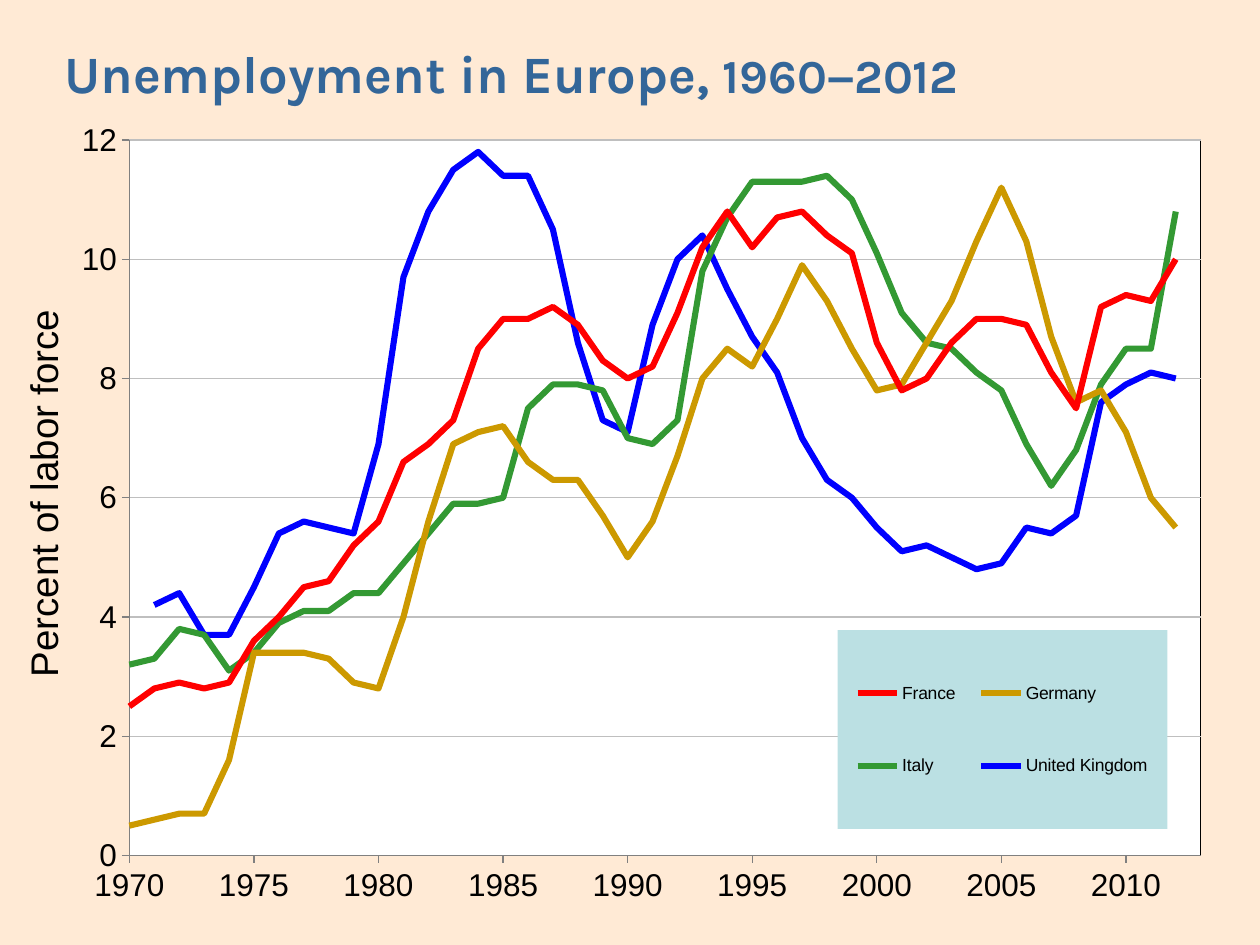
from lxml.etree import fromstring
from pptx import Presentation
from pptx.chart.data import XyChartData
from pptx.dml.color import RGBColor
from pptx.enum.chart import XL_CHART_TYPE, XL_LEGEND_POSITION, XL_MARKER_STYLE, XL_TICK_MARK
from pptx.enum.text import MSO_ANCHOR, PP_ALIGN
from pptx.oxml.ns import nsdecls, qn
from pptx.util import Inches, Pt

TITLE = [("Unemployment in Europe, ", 30, "Karla"), ("1960", 27, "Karla"),
         ("–", 28, "Arial"), ("2012", 27, "Karla")]
AXIS_LABEL = [("Percent of labor force", 22, "Arial")]
FIRST_YEAR = 1970
COUNTRIES = [
    ("France", "FF0000", [
        2.5, 2.8, 2.9, 2.8, 2.9, 3.6, 4, 4.5, 4.6, 5.2, 5.6, 6.6, 6.9, 7.3, 8.5,
        9, 9, 9.2, 8.9, 8.3, 8, 8.2, 9.1, 10.2, 10.8, 10.2, 10.7, 10.8, 10.4, 10.1,
        8.6, 7.8, 8, 8.6, 9, 9, 8.9, 8.1, 7.5, 9.2, 9.4, 9.3, 10]),
    ("Germany", "CC9900", [
        0.5, 0.6, 0.7, 0.7, 1.6, 3.4, 3.4, 3.4, 3.3, 2.9, 2.8, 4, 5.6, 6.9, 7.1,
        7.2, 6.6, 6.3, 6.3, 5.7, 5, 5.6, 6.7, 8, 8.5, 8.2, 9, 9.9, 9.3, 8.5,
        7.8, 7.9, 8.6, 9.3, 10.3, 11.2, 10.3, 8.7, 7.6, 7.8, 7.1, 6, 5.5]),
    ("Italy", "339933", [
        3.2, 3.3, 3.8, 3.7, 3.1, 3.4, 3.9, 4.1, 4.1, 4.4, 4.4, 4.9, 5.4, 5.9, 5.9,
        6, 7.5, 7.9, 7.9, 7.8, 7, 6.9, 7.3, 9.8, 10.7, 11.3, 11.3, 11.3, 11.4, 11,
        10.1, 9.1, 8.6, 8.5, 8.1, 7.8, 6.9, 6.2, 6.8, 7.9, 8.5, 8.5, 10.8]),
    ("United Kingdom", "0000FF", [
        None, 4.2, 4.4, 3.7, 3.7, 4.5, 5.4, 5.6, 5.5, 5.4, 6.9, 9.7, 10.8, 11.5, 11.8,
        11.4, 11.4, 10.5, 8.6, 7.3, 7.1, 8.9, 10, 10.4, 9.5, 8.7, 8.1, 7, 6.3, 6,
        5.5, 5.1, 5.2, 5, 4.8, 4.9, 5.5, 5.4, 5.7, 7.6, 7.9, 8.1, 8]),
]


def rgb(color):
    return RGBColor.from_string(color)


def add_text(slide, runs, box, color="000000", bold=False, align=PP_ALIGN.LEFT,
             rotation=0, spacing=1.0):
    text_box = slide.shapes.add_textbox(*map(Inches, box))
    text_box.rotation = rotation
    frame = text_box.text_frame
    frame.word_wrap = True
    frame.vertical_anchor = MSO_ANCHOR.MIDDLE
    frame.margin_left = frame.margin_right = frame.margin_top = frame.margin_bottom = 0
    paragraph = frame.paragraphs[0]
    paragraph.alignment = align
    paragraph.line_spacing = spacing
    for words, size, font_name in runs:
        run = paragraph.add_run()
        run.text = words
        run.font.size = Pt(size)
        run.font.name = font_name
        run.font.bold = bold
        run.font.color.rgb = rgb(color)


def set_font(font, size):
    font.name = "Arial"
    font.size = Pt(size)
    font.color.rgb = rgb("000000")


def set_layout(parent, index, x, y, w, h, target=""):
    for old in parent.findall(qn("c:layout")):
        parent.remove(old)
    parent.insert(index, fromstring(
        f'<c:layout {nsdecls("c")}><c:manualLayout>{target}'
        f'<c:xMode val="edge"/><c:yMode val="edge"/><c:x val="{x}"/><c:y val="{y}"/>'
        f'<c:w val="{w}"/><c:h val="{h}"/></c:manualLayout></c:layout>'))


def area_format(fill, line="<a:noFill/>"):
    return fromstring(
        f'<c:spPr {nsdecls("c", "a")}><a:solidFill><a:srgbClr val="{fill}"/></a:solidFill>'
        f'<a:ln w="9525">{line}</a:ln></c:spPr>')


def format_axis(axis, low, high, step):
    axis.minimum_scale, axis.maximum_scale, axis.major_unit = low, high, step
    axis.major_tick_mark = XL_TICK_MARK.OUTSIDE
    axis.minor_tick_mark = XL_TICK_MARK.NONE
    axis.tick_labels.number_format = "0"
    axis.tick_labels.number_format_is_linked = False
    set_font(axis.tick_labels.font, 18)
    axis.format.line.color.rgb = rgb("808080")
    axis.format.line.width = Pt(0.75)


def add_unemployment_chart(slide):
    data = XyChartData()
    for country, _, rates in COUNTRIES:
        points = data.add_series(country)
        for year, rate in enumerate(rates, FIRST_YEAR):
            if rate is not None:
                points.add_data_point(year, rate)
    chart = slide.shapes.add_chart(XL_CHART_TYPE.XY_SCATTER_LINES_NO_MARKERS,
                                   *map(Inches, (0.42, 0.9, 9.48, 6.41)), data).chart
    chart.has_title = False
    set_font(chart.font, 10)

    for series, (_, color, _) in zip(chart.plots[0].series, COUNTRIES):
        series.smooth = False
        series.marker.style = XL_MARKER_STYLE.NONE
        series.format.line.color.rgb = rgb(color)
        series.format.line.width = Pt(3.5)

    years, percent = chart.category_axis, chart.value_axis
    format_axis(years, 1970, 2013, 5)
    format_axis(percent, 0, 12, 2)
    years.has_major_gridlines = False
    percent.has_major_gridlines = True
    gridline = percent.major_gridlines.format.line
    gridline.color.rgb = rgb("BFBFBF")
    gridline.width = Pt(0.75)

    plot_area = chart.plots[0]._element.getparent()
    set_layout(plot_area, 0, 0.064, 0.033, 0.897, 0.886, '<c:layoutTarget val="inner"/>')
    plot_area.append(area_format(
        "FFFFFF", '<a:solidFill><a:srgbClr val="000000"/></a:solidFill>'))

    chart.has_legend = True
    legend = chart.legend
    legend.position = XL_LEGEND_POSITION.RIGHT
    legend.include_in_layout = True
    set_font(legend.font, 10)
    set_layout(legend._element, 1, 0.657, 0.64, 0.276, 0.246)
    legend._element.find(qn("c:overlay")).addnext(area_format("BBE0E3"))


def main():
    presentation = Presentation()
    presentation.slide_width, presentation.slide_height = Inches(10), Inches(7.5)
    slide = presentation.slides.add_slide(presentation.slide_layouts[6])
    slide.background.fill.solid()
    slide.background.fill.fore_color.rgb = rgb("FFEAD5")
    add_unemployment_chart(slide)
    add_text(slide, TITLE, (0.51, 0.19, 9.02, 0.75), color="336699", bold=True, spacing=1.05)
    add_text(slide, AXIS_LABEL, (-1.45, 3.68, 3.58, 0.47), align=PP_ALIGN.CENTER, rotation=270)
    presentation.save("out.pptx")


if __name__ == "__main__":
    main()
